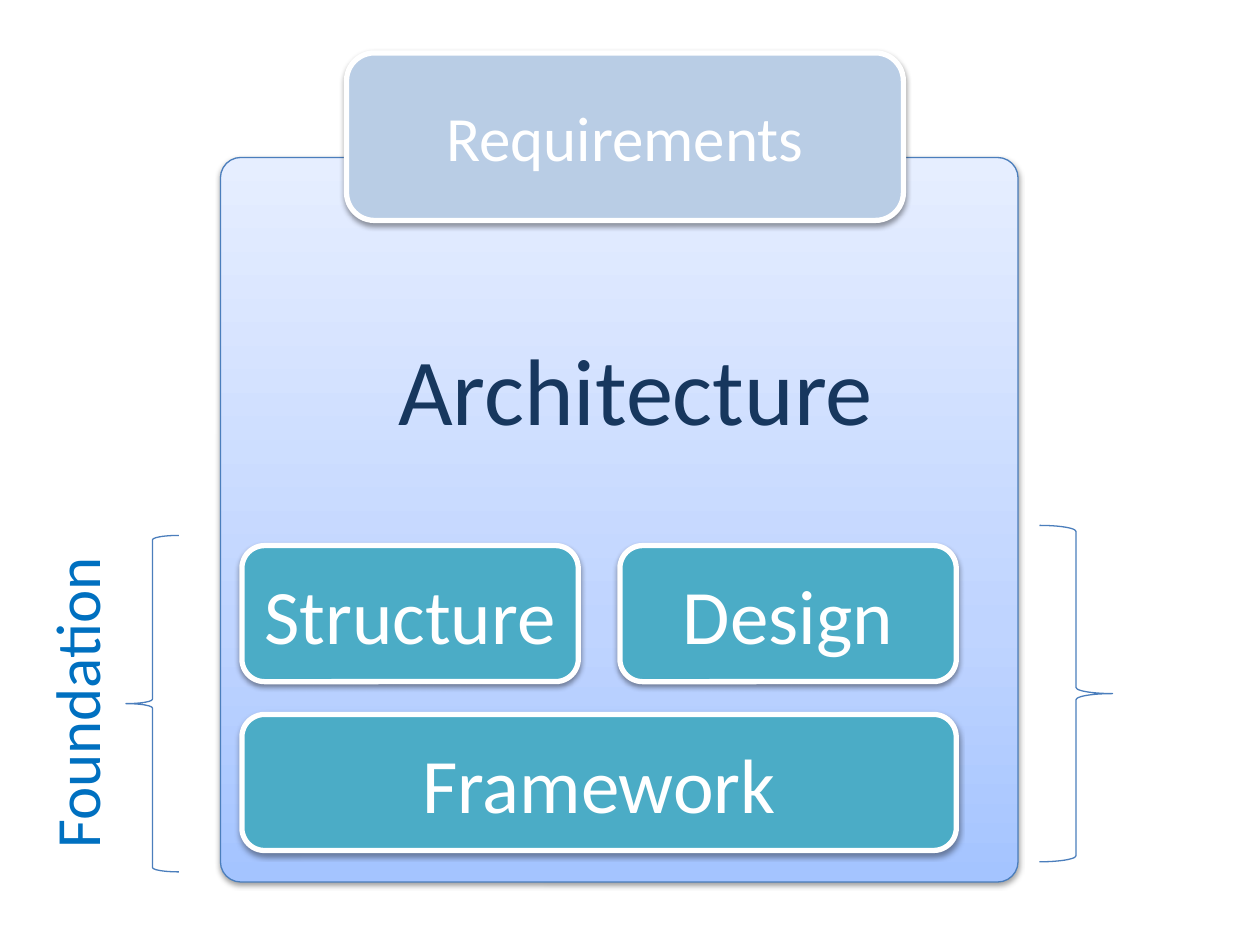
from copy import deepcopy

from lxml.etree import SubElement
from pptx import Presentation
from pptx.dml.color import RGBColor
from pptx.enum.shapes import MSO_SHAPE
from pptx.enum.text import MSO_ANCHOR, PP_ALIGN
from pptx.oxml.ns import qn
from pptx.util import Inches, Pt

COLORS = {
    "outline": "4B7EBC",
    "block": "4BACC6",
    "requirements": "B9CDE5",
    "white": "FFFFFF",
    "architecture": "17375E",
    "foundation": "0070C0",
    "shadow": "000000",
}
BACKDROP_STOPS = [(0, "A4C4FF"), (0.35, "BFD4FF"), (1, "E6EEFF")]


class Diagram:
    font = "Calibri"

    def __init__(self, slide):
        self.slide = slide

    def color(self, name):
        return RGBColor.from_string(COLORS[name])

    def shape(self, preset, box, line, width):
        shape = self.slide.shapes.add_shape(preset, *map(Inches, box))
        shape.shadow.inherit = False
        shape.line.color.rgb = self.color(line)
        shape.line.width = Pt(width)
        return shape

    def drop_shadow(self, shape):
        effects = shape._element.spPr.find(qn("a:effectLst"))
        shadow = SubElement(effects, qn("a:outerShdw"), blurRad=str(Pt(3.1)),
                            dist=str(Pt(1.6)), dir="5400000", rotWithShape="0")
        tint = SubElement(shadow, qn("a:srgbClr"), val=COLORS["shadow"])
        SubElement(tint, qn("a:alpha"), val="38000")

    def set_text(self, frame, text, size, color, align):
        frame.word_wrap = True
        paragraph = frame.paragraphs[0]
        paragraph.text = text
        paragraph.alignment = align
        paragraph.font.name = self.font
        paragraph.font.size = Pt(size)
        paragraph.font.color.rgb = self.color(color)

    def backdrop(self, box):
        panel = self.shape(MSO_SHAPE.ROUNDED_RECTANGLE, box, "outline", 0.75)
        panel.adjustments[0] = 0.028
        panel.fill.gradient()
        panel.fill.gradient_angle = 90
        stops = panel._element.spPr.find(qn("a:gradFill")).find(qn("a:gsLst"))
        stops.append(deepcopy(stops[0]))
        for stop, (position, tint) in zip(panel.fill.gradient_stops, BACKDROP_STOPS):
            stop.position = position
            stop.color.rgb = RGBColor.from_string(tint)
        self.drop_shadow(panel)

    def block(self, text, box, size=44, fill="block"):
        block = self.shape(MSO_SHAPE.ROUNDED_RECTANGLE, box, "white", 3)
        block.fill.solid()
        block.fill.fore_color.rgb = self.color(fill)
        self.drop_shadow(block)
        block.text_frame.vertical_anchor = MSO_ANCHOR.MIDDLE
        self.set_text(block.text_frame, text, size, "white", PP_ALIGN.CENTER)

    def brace(self, preset, box):
        brace = self.shape(preset, box, "outline", 0.75)
        brace.fill.background()

    def label(self, text, box, size, color, align=PP_ALIGN.LEFT, rotation=0):
        label = self.slide.shapes.add_textbox(*map(Inches, box))
        label.rotation = rotation
        self.set_text(label.text_frame, text, size, color, align)


def main():
    deck = Presentation()
    deck.slide_width, deck.slide_height = Inches(10), Inches(7.5)
    diagram = Diagram(deck.slides.add_slide(deck.slide_layouts[6]))

    diagram.backdrop((1.75, 1.25, 6.33, 5.75))

    left, top, width, height = 1.92, 4.33, 2.67, 1.08
    column_step, row_step = 3, 1.34
    for column, text in enumerate(["Structure", "Design"]):
        diagram.block(text, (left + column * column_step, top, width, height))
    diagram.block("Framework", (left, top + row_step, column_step + width, height))

    diagram.label("Architecture", (2.92, 2.58, 4.25, 1.01), 54, "architecture",
                  PP_ALIGN.CENTER)
    diagram.brace(MSO_SHAPE.RIGHT_BRACE, (8.25, 4.17, 0.58, 2.67))
    diagram.brace(MSO_SHAPE.LEFT_BRACE, (1, 4.25, 0.42, 2.67))
    diagram.label("Foundation", (-0.69, 5.19, 2.58, 0.71), 36, "foundation",
                  rotation=270)
    diagram.block("Requirements", (2.75, 0.42, 4.42, 1.33), 36, "requirements")

    deck.save("out.pptx")


if __name__ == "__main__":
    main()
